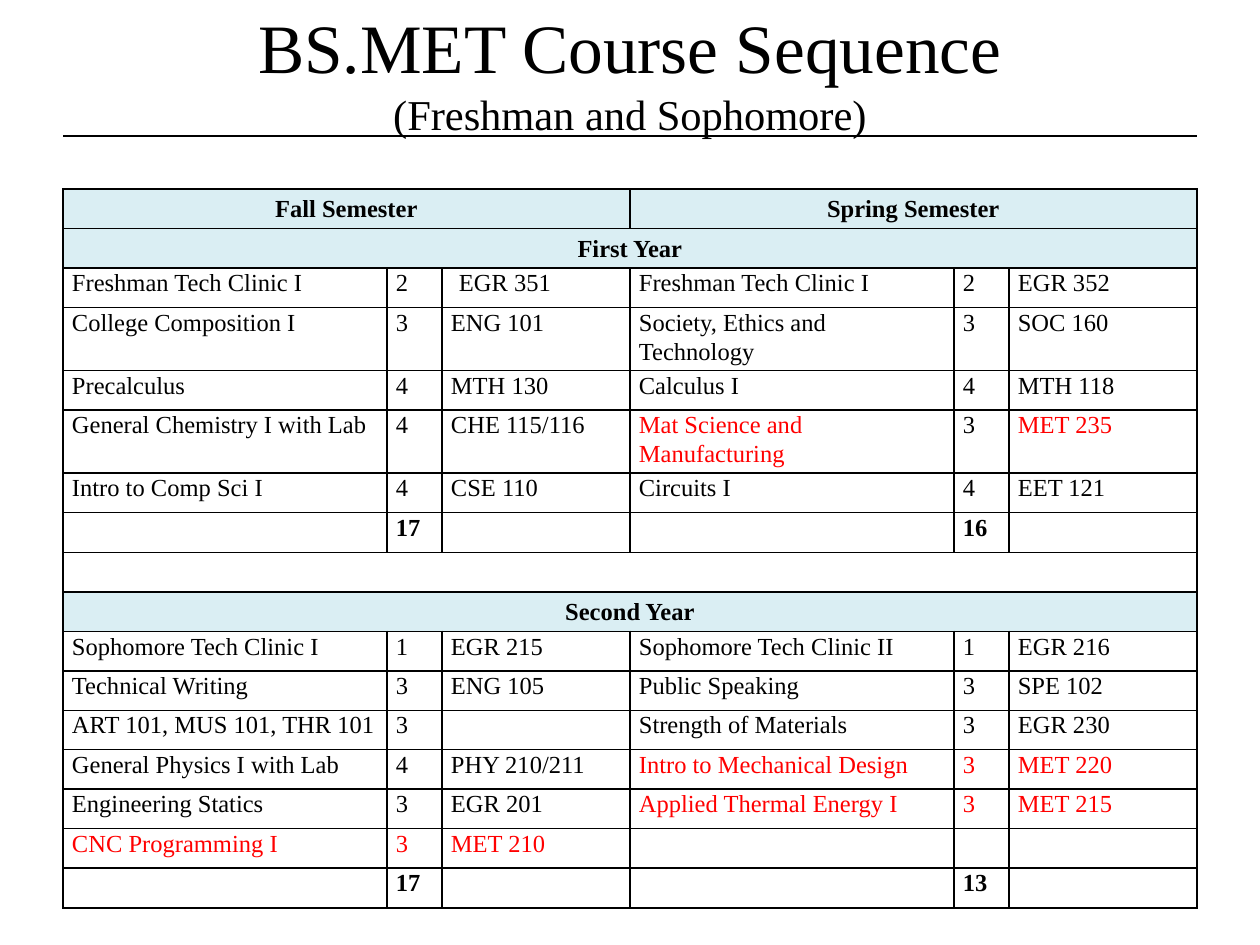
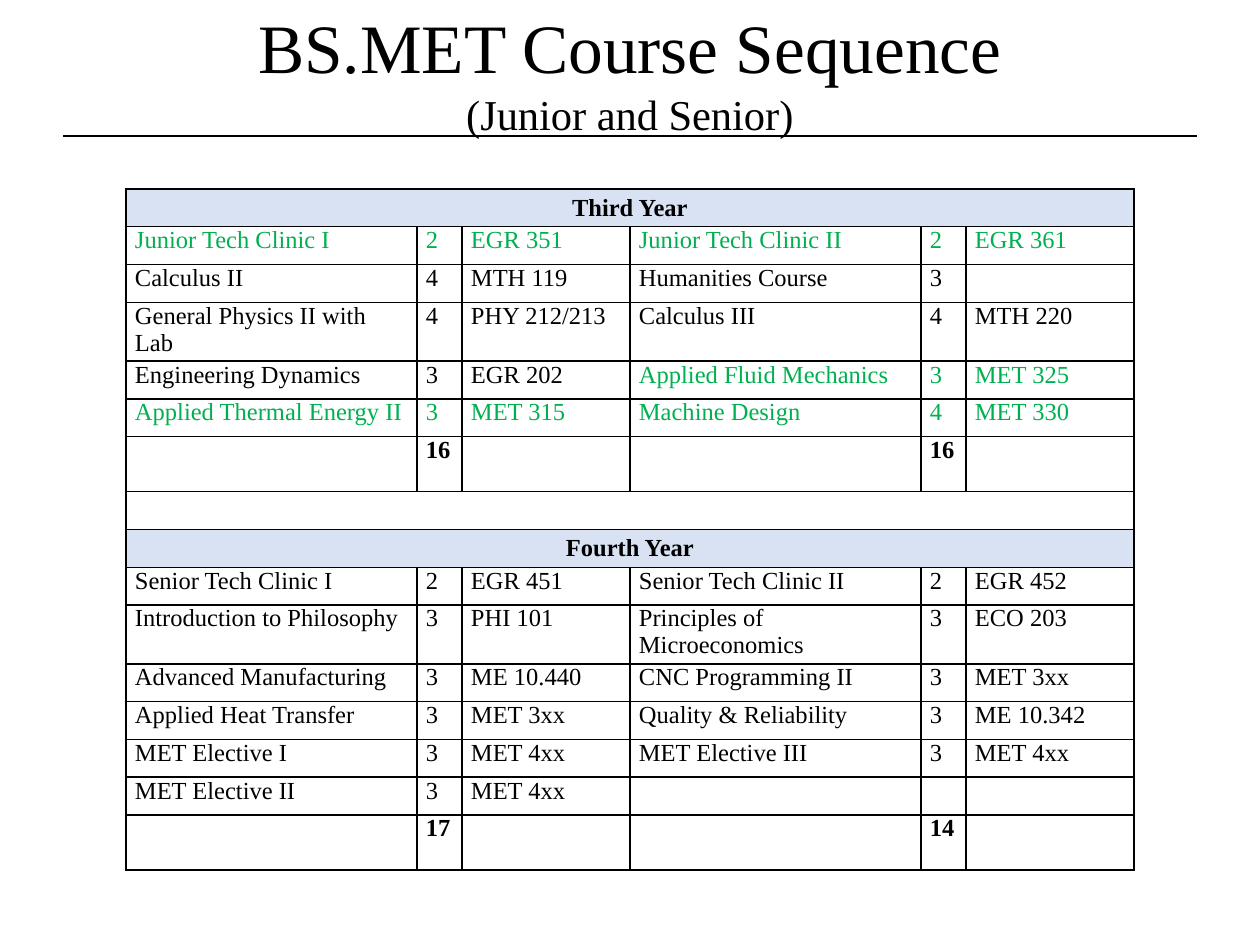
from dataclasses import dataclass
from itertools import zip_longest
from typing import NamedTuple

from lxml.etree import SubElement
from pptx import Presentation
from pptx.dml.color import RGBColor
from pptx.enum.shapes import MSO_CONNECTOR as Connector
from pptx.enum.text import MSO_ANCHOR as Anchor, PP_ALIGN as Align
from pptx.oxml import parse_xml
from pptx.oxml.ns import nsdecls, qn
from pptx.util import Emu, Pt

EMU_PER_PX = 914400 / 126


def px(length: float) -> Emu:
    return Emu(round(length * EMU_PER_PX))


@dataclass(frozen=True)
class Theme:
    font: str = "Times New Roman"
    ink: str = "000000"
    red: str = "FF0000"
    green: str = "00B050"
    aqua_band: str = "DAEEF3"
    blue_band: str = "D9E2F3"
    title_size: float = 39.6
    subtitle_size: float = 24.3
    body_size: float = 14
    rule_width: float = 0.75
    border_width: float = 1


THEME = Theme()
PLAIN = (False, False, False)
MARKED = (True, True, True)
NAME_AND_CODE = (True, False, True)


class Course(NamedTuple):
    name: str = ""
    credits: str = ""
    code: str = ""
    marks: tuple[bool, bool, bool] = PLAIN
    code_indent: int = 0


class Year(NamedTuple):
    title: str
    fall: list[Course]
    spring: list[Course]
    fall_total: str
    spring_total: str


@dataclass(frozen=True)
class Sequence:
    """One slide; body_height is shared equally by all rows but the totals."""
    subtitle: str
    left: int
    semester_columns: tuple[int, int, int]
    body_height: int
    total_row_height: int
    band: str
    accent: str
    years: list[Year]
    semesters: tuple[str, ...] = ()
    line_spacing: float | None = None


FIRST_YEAR = Year(
    "First Year",
    [Course("Freshman Tech Clinic I", "2", "EGR 351", code_indent=8),
     Course("College Composition I", "3", "ENG 101"),
     Course("Precalculus", "4", "MTH 130"),
     Course("General Chemistry I with Lab", "4", "CHE 115/116"),
     Course("Intro to Comp Sci I", "4", "CSE 110")],
    [Course("Freshman Tech Clinic I", "2", "EGR 352"),
     Course("Society, Ethics and Technology", "3", "SOC 160"),
     Course("Calculus I", "4", "MTH 118"),
     Course("Mat Science and Manufacturing", "3", "MET 235", NAME_AND_CODE),
     Course("Circuits I", "4", "EET 121")],
    "17", "16")

SECOND_YEAR = Year(
    "Second Year",
    [Course("Sophomore Tech Clinic I", "1", "EGR 215"),
     Course("Technical Writing", "3", "ENG 105"),
     Course("ART 101, MUS 101, THR 101", "3"),
     Course("General Physics I with Lab", "4", "PHY 210/211"),
     Course("Engineering Statics", "3", "EGR 201"),
     Course("CNC Programming I", "3", "MET 210", MARKED)],
    [Course("Sophomore Tech Clinic II", "1", "EGR 216"),
     Course("Public Speaking", "3", "SPE 102"),
     Course("Strength of Materials", "3", "EGR 230"),
     Course("Intro to Mechanical Design", "3", "MET 220", MARKED),
     Course("Applied Thermal Energy I", "3", "MET 215", MARKED)],
    "17", "13")

THIRD_YEAR = Year(
    "Third Year",
    [Course("Junior Tech Clinic I", "2", "EGR 351", MARKED),
     Course("Calculus II", "4", "MTH 119"),
     Course("General Physics II with Lab", "4", "PHY 212/213"),
     Course("Engineering Dynamics", "3", "EGR 202"),
     Course("Applied Thermal Energy II", "3", "MET 315", MARKED)],
    [Course("Junior Tech Clinic II", "2", "EGR 361", MARKED),
     Course("Humanities Course", "3"),
     Course("Calculus III", "4", "MTH 220"),
     Course("Applied Fluid Mechanics", "3", "MET 325", MARKED),
     Course("Machine Design", "4", "MET 330", MARKED)],
    "16", "16")

FOURTH_YEAR = Year(
    "Fourth Year",
    [Course("Senior Tech Clinic I", "2", "EGR 451"),
     Course("Introduction to Philosophy", "3", "PHI 101"),
     Course("Advanced Manufacturing", "3", "ME 10.440"),
     Course("Applied Heat Transfer", "3", "MET 3xx"),
     Course("MET Elective I", "3", "MET 4xx"),
     Course("MET Elective II", "3", "MET 4xx")],
    [Course("Senior Tech Clinic II", "2", "EGR 452"),
     Course("Principles of Microeconomics", "3", "ECO 203"),
     Course("CNC Programming II", "3", "MET 3xx"),
     Course("Quality & Reliability", "3", "ME 10.342"),
     Course("MET Elective III", "3", "MET 4xx")],
    "17", "14")

SEQUENCES = [
    Sequence("(Freshman and Sophomore)", left=63, semester_columns=(324, 55, 188),
             body_height=593, total_row_height=40, band=THEME.aqua_band,
             accent=THEME.red, years=[FIRST_YEAR, SECOND_YEAR],
             semesters=("Fall Semester", "Spring Semester"), line_spacing=1.07),
    Sequence("(Junior and Senior)", left=126, semester_columns=(291, 45, 168),
             body_height=529, total_row_height=55, band=THEME.blue_band,
             accent=THEME.green, years=[THIRD_YEAR, FOURTH_YEAR]),
]


def write(paragraph, text: str, *, size: float = THEME.body_size,
          color: str = THEME.ink, bold: bool = False, align=Align.LEFT,
          line_spacing: float | None = None, indent: int = 0) -> None:
    run = paragraph.add_run()
    run.text = text
    run.font.name = THEME.font
    run.font.size = Pt(size)
    run.font.bold = bold
    run.font.color.rgb = RGBColor.from_string(color)
    paragraph.alignment = align
    if line_spacing:
        paragraph.line_spacing = line_spacing
    if indent:
        paragraph._p.get_or_add_pPr().set("marL", str(px(indent)))


def add_heading(slide, subtitle: str) -> None:
    box = slide.shapes.add_textbox(px(63), px(-10), px(1134), px(157))
    frame = box.text_frame
    frame.word_wrap = True
    frame.vertical_anchor = Anchor.MIDDLE
    frame.margin_top, frame.margin_bottom = px(12), px(6)
    paragraph = frame.paragraphs[0]
    write(paragraph, "BS.MET Course Sequence", size=THEME.title_size, align=Align.CENTER)
    paragraph.add_line_break()
    write(paragraph, subtitle, size=THEME.subtitle_size, align=Align.CENTER)

    rule = slide.shapes.add_connector(Connector.STRAIGHT, px(63), px(136), px(1197), px(136))
    rule.line.color.rgb = RGBColor.from_string(THEME.ink)
    rule.line.width = Pt(THEME.rule_width)
    SubElement(rule._element.spPr, qn("a:effectLst"))


def format_cell(cell) -> None:
    """Clear the fill, set the insets and draw all four borders."""
    cell.fill.background()
    cell.margin_left = cell.margin_right = px(9)
    cell.margin_top = cell.margin_bottom = 0
    properties = cell._tc.get_or_add_tcPr()
    for position, side in enumerate("LRTB"):
        properties.insert(position, parse_xml(
            f'<a:ln{side} {nsdecls("a")} w="{Pt(THEME.border_width)}"><a:solidFill>'
            f'<a:srgbClr val="{THEME.ink}"/></a:solidFill></a:ln{side}>'))


class SequenceTable:
    """Fills a six-column table from the top, one row at a time."""

    def __init__(self, slide, sequence: Sequence) -> None:
        self.sequence = sequence
        years = sequence.years
        course_rows = sum(max(len(year.fall), len(year.spring)) for year in years)
        spacer_rows = len(years) - 1
        body_rows = course_rows + len(years) + spacer_rows + bool(sequence.semesters)
        self.row_height = sequence.body_height / body_rows
        columns = sequence.semester_columns * 2
        height = sequence.body_height + sequence.total_row_height * len(years)
        self.table = slide.shapes.add_table(
            body_rows + len(years), len(columns), px(sequence.left), px(189),
            px(sum(columns)), px(height)).table
        self.table.first_row = self.table.horz_banding = False
        for column, width in zip(self.table.columns, columns):
            column.width = px(width)
        for cell in self.table.iter_cells():
            format_cell(cell)
        self.next_row = 0

    def start_row(self, height: float | None = None) -> int:
        row = self.next_row
        self.table.rows[row].height = px(height or self.row_height)
        self.next_row += 1
        return row

    def put(self, row: int, column: int, text: str, **text_format) -> None:
        if text:
            paragraph = self.table.cell(row, column).text_frame.paragraphs[0]
            write(paragraph, text, line_spacing=self.sequence.line_spacing, **text_format)

    def add_band(self, *titles: str) -> None:
        row = self.start_row()
        span = 6 // len(titles)
        for index, title in enumerate(titles):
            first = index * span
            cell = self.table.cell(row, first)
            cell.merge(self.table.cell(row, first + span - 1))
            if title:
                cell.fill.solid()
                cell.fill.fore_color.rgb = RGBColor.from_string(self.sequence.band)
                cell.vertical_anchor = Anchor.MIDDLE
                self.put(row, first, title, bold=True, align=Align.CENTER)

    def add_courses(self, fall: Course, spring: Course) -> None:
        row = self.start_row()
        for first, course in ((0, fall), (3, spring)):
            for offset, (text, marked) in enumerate(zip(course[:3], course.marks)):
                self.put(row, first + offset, text,
                         color=self.sequence.accent if marked else THEME.ink,
                         indent=course.code_indent if offset == 2 else 0)

    def add_totals(self, year: Year) -> None:
        row = self.start_row(self.sequence.total_row_height)
        self.put(row, 1, year.fall_total, bold=True)
        self.put(row, 4, year.spring_total, bold=True)

    def fill(self) -> None:
        if self.sequence.semesters:
            self.add_band(*self.sequence.semesters)
        for index, year in enumerate(self.sequence.years):
            if index:
                self.add_band("")
            self.add_band(year.title)
            for fall, spring in zip_longest(year.fall, year.spring, fillvalue=Course()):
                self.add_courses(fall, spring)
            self.add_totals(year)


def main() -> None:
    presentation = Presentation()
    presentation.slide_width, presentation.slide_height = px(1260), px(945)
    for sequence in SEQUENCES:
        slide = presentation.slides.add_slide(presentation.slide_layouts[6])
        add_heading(slide, sequence.subtitle)
        SequenceTable(slide, sequence).fill()
    presentation.save("out.pptx")


if __name__ == "__main__":
    main()
